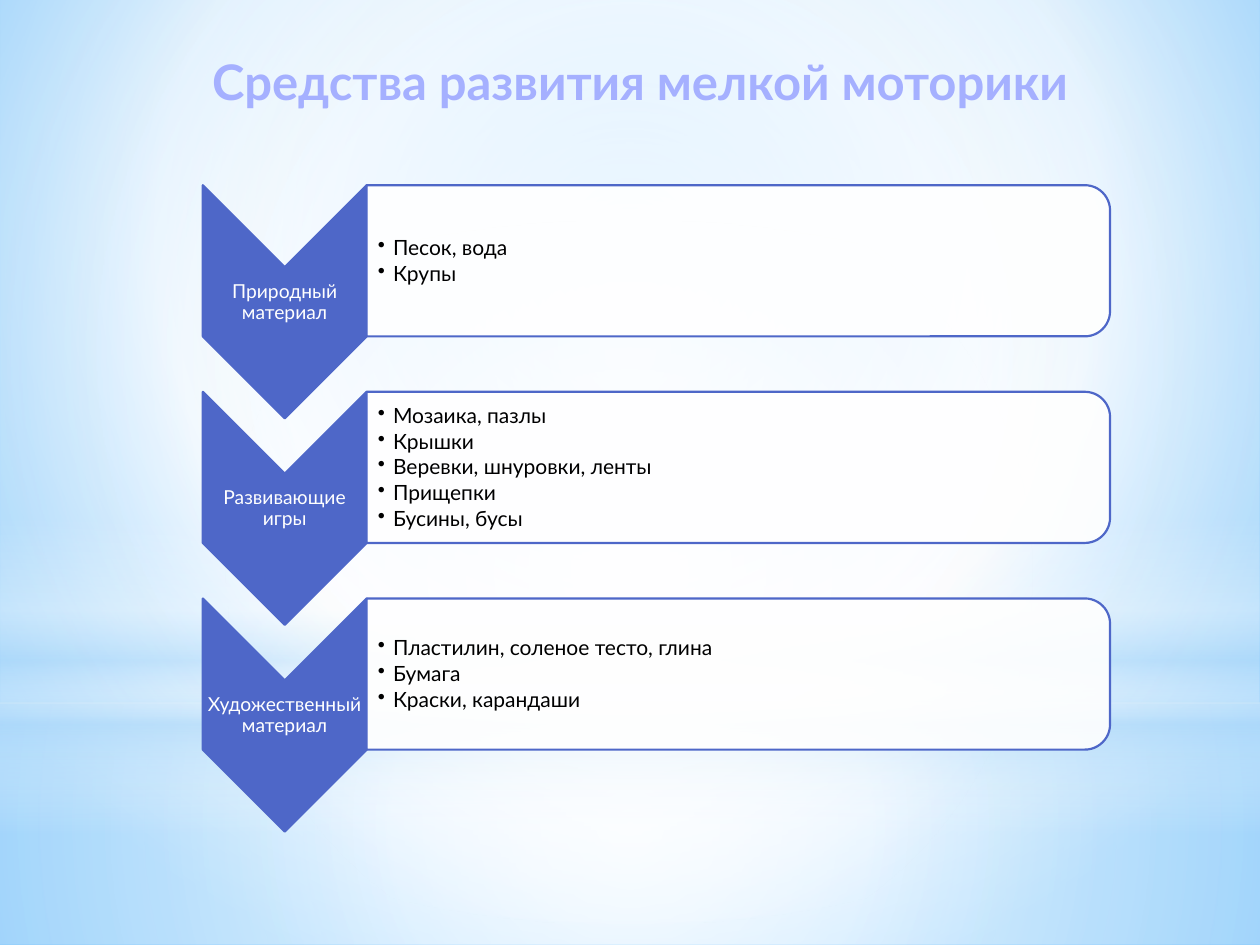
from lxml import etree
from pptx import Presentation
from pptx.dml.color import RGBColor
from pptx.enum.shapes import MSO_SHAPE
from pptx.enum.text import MSO_ANCHOR, PP_ALIGN
from pptx.oxml import parse_xml
from pptx.oxml.ns import qn
from pptx.util import Inches, Pt

FONT = "Lato"
BLUE, WHITE, BLACK, LILAC = "4E67C8", "FFFFFF", "000000", "A5B0FF"
SKY = "B4DCFA"
CENTRE = (50, 50, 50, 50)
DRAWING = "http://schemas.openxmlformats.org/drawingml/2006/main"

ROWS = [
    ("Природный материал", ["Песок, вода", "Крупы"]),
    ("Развивающие игры", ["Мозаика, пазлы", "Крышки", "Веревки, шнуровки, ленты",
                          "Прищепки", "Бусины, бусы"]),
    ("Художественный материал", ["Пластилин, соленое тесто, глина", "Бумага",
                                 "Краски, карандаши"]),
]


def color(value):
    return RGBColor.from_string(value)


def set_gradient(properties, stops, focus=None):
    """Replace the solid fill by a circular gradient, or a vertical one without focus."""
    marks = "".join(
        f'<a:gs pos="{position * 1000}"><a:srgbClr val="{value}">'
        f'<a:alpha val="{alpha * 1000}"/></a:srgbClr></a:gs>'
        for position, value, alpha in stops)
    if focus:
        sides = " ".join(f'{side}="{part * 1000}"' for side, part in zip("ltrb", focus))
        direction = f'<a:path path="circle"><a:fillToRect {sides}/></a:path>'
    else:
        direction = '<a:lin ang="5400000" scaled="0"/>'
    gradient = parse_xml(f'<a:gradFill xmlns:a="{DRAWING}" rotWithShape="1">'
                         f'<a:gsLst>{marks}</a:gsLst>{direction}</a:gradFill>')
    properties.replace(properties.find(qn("a:solidFill")), gradient)


def add_shape(page, kind, box, fill, line=None):
    shape = page.shapes.add_shape(kind, *(Inches(length) for length in box))
    shape.shadow.inherit = False
    shape.fill.solid()
    shape.fill.fore_color.rgb = color(fill)
    if line:
        shape.line.color.rgb = color(line)
        shape.line.width = Pt(1.25)
    else:
        shape.line.fill.background()
    return shape


def add_turned(page, kind, box, fill):
    """Add a shape turned by 90 degrees that covers the given box."""
    left, top, width, height = box
    shift = (width - height) / 2
    shape = add_shape(page, kind, (left + shift, top - shift, height, width), fill, BLUE)
    shape.rotation = 90
    return shape


def add_text(page, box, lines, size, ink, left_inset=0.01, after=0):
    shape = page.shapes.add_textbox(*(Inches(length) for length in box))
    frame = shape.text_frame
    frame.word_wrap = True
    frame.vertical_anchor = MSO_ANCHOR.MIDDLE
    frame.margin_left = Inches(left_inset)
    frame.margin_top = frame.margin_right = frame.margin_bottom = Inches(0.01)
    frame.text = "\n".join(lines)
    for para in frame.paragraphs:
        para.font.name = FONT
        para.font.size = Pt(size)
        para.font.color.rgb = color(ink)
        para.line_spacing = 0.9
        para.space_after = Pt(after)
    return frame


def add_bullet(para):
    properties = para._p.get_or_add_pPr()
    properties.set("marL", str(Inches(0.12)))
    properties.set("indent", str(-Inches(0.12)))
    bullet = etree.SubElement(properties, qn("a:buChar"))
    bullet.set("char", "•")
    # the bullet goes before the default run properties
    defaults = properties.find(qn("a:defRPr"))
    if defaults is not None:
        defaults.addprevious(bullet)


def draw_background(page):
    page.background.fill.solid()
    set_gradient(page._element.cSld.bg.bgPr,
                 [(0, "9ED5FF", 100), (60, WHITE, 100), (100, "5BB9FF", 100)],
                 (20, 10, 20, 60))
    rectangle = MSO_SHAPE.RECTANGLE
    layers = [
        (rectangle, (0, 5.58, 10, 1.92),
         [(0, WHITE, 91), (37, WHITE, 76), (100, SKY, 79)], CENTRE),
        (rectangle, (0, 0, 10, 5.58),
         [(0, WHITE, 89), (48, WHITE, 62), (100, SKY, 79)], CENTRE),
        (rectangle, (0, 4.12, 10, 2.5),
         [(0, WHITE, 0), (29, WHITE, 30), (45, SKY, 40), (55, WHITE, 26),
          (65, SKY, 60), (100, WHITE, 0)], None),
        (MSO_SHAPE.OVAL, (0, 1.75, 10, 5.58),
         [(0, WHITE, 100), (56, WHITE, 0)], CENTRE),
    ]
    for kind, box, stops, focus in layers:
        set_gradient(add_shape(page, kind, box, WHITE)._element.spPr, stops, focus)


def draw_title(page, box):
    shape = page.shapes.add_textbox(*(Inches(length) for length in box))
    shape.text_frame.word_wrap = False
    para = shape.text_frame.paragraphs[0]
    para.text = "Средства развития мелкой моторики"
    para.alignment = PP_ALIGN.CENTER
    para.font.name = FONT
    para.font.size = Pt(28)
    para.font.bold = True
    para.font.color.rgb = color(LILAC)


def draw_row(page, box, heading, items):
    left, top, width, height = box
    arrow_width, panel_height = 1.3, 1.2
    panel_left = left + arrow_width
    panel_width = width - arrow_width

    # Chevron with its heading
    add_turned(page, MSO_SHAPE.CHEVRON, (left, top, arrow_width, height), BLUE)
    label = add_text(page, (left, top + arrow_width / 2, arrow_width, 0.56),
                     [heading], 11, WHITE, after=3.85)
    label.paragraphs[0].alignment = PP_ALIGN.CENTER

    # Panel with its list
    panel = add_turned(page, MSO_SHAPE.ROUND_2_SAME_RECTANGLE,
                       (panel_left, top, panel_width, panel_height), WHITE)
    tint = panel._element.spPr.find(qn("a:solidFill"))[0]
    etree.SubElement(tint, qn("a:alpha")).set("val", "90000")
    content = add_text(page, (panel_left, top + 0.06, panel_width - 0.06, 1.09),
                       items, 12, BLACK, left_inset=0.09, after=1.8)
    for para in content.paragraphs:
        add_bullet(para)


def main():
    deck = Presentation()
    deck.slide_width, deck.slide_height = Inches(10), Inches(7.5)
    page = deck.slides.add_slide(deck.slide_layouts[6])
    draw_background(page)
    draw_title(page, (1.43, 0.36, 7.3, 0.57))
    for index, (heading, items) in enumerate(ROWS):
        draw_row(page, (1.61, 1.47 + index * 1.64, 7.2, 1.85), heading, items)
    deck.save("out.pptx")


if __name__ == "__main__":
    main()
